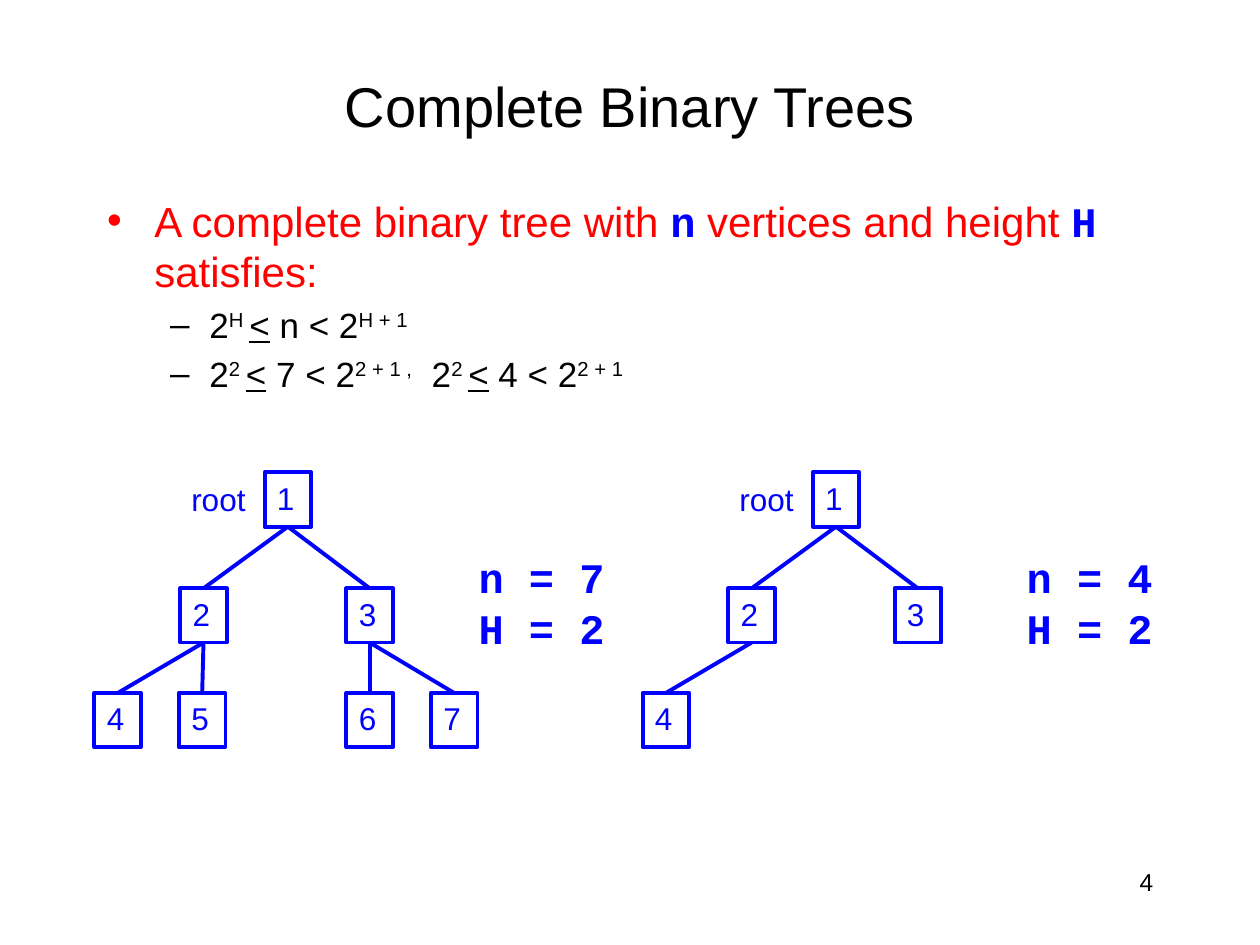
from lxml import etree
from pptx import Presentation
from pptx import util as u
from pptx.dml.color import RGBColor
from pptx.enum import shapes, text
from pptx.oxml.ns import qn

PX = 9144  # EMU per px, 100 px to the inch
HUES = {"ink": "000000", "red": "FF0000", "blue": "0000FF"}

# Text formats
LEAD = {"size": 24, "name": "Arial", "hue": "red", "bold": False}
CODE = {"size": 24, "name": "Courier New", "hue": "blue", "bold": True}
MATH = {"size": 20, "name": "Arial", "hue": "ink"}
SUP = MATH | {"base": 30}
LINE = MATH | {"underline": True}
NODE = {"size": 18, "name": "Arial", "hue": "blue"}
HEAD = {"size": 32, "name": "Arial", "hue": "ink"}
PAGE = {"size": 14, "name": "Arial", "hue": "ink"}

# Tree layout: node number -> left, top; the parent of n is n // 2
SPOTS = {1: (210, 375), 2: (143, 467), 3: (275, 467),
         4: (75, 550), 5: (142, 550), 6: (275, 550), 7: (342, 550)}
STEP = 435  # from one tree to the next


class Deck:
    def __init__(self):
        self.prs = Presentation()
        self.prs.slide_width, self.prs.slide_height = 1000 * PX, 750 * PX
        self.slide = self.prs.slides.add_slide(self.prs.slide_layouts[1])
        self.items = self.slide.shapes

    def style(self, para, runs):
        for words, look in runs:
            run = para.add_run()
            run.text = words
            for key, val in look.items():
                if key == "hue":
                    run.font.color.rgb = RGBColor.from_string(HUES[val])
                elif key == "base":
                    run._r.get_or_add_rPr().set("baseline", str(val * 1000))
                else:
                    setattr(run.font, key, u.Pt(val) if key == "size" else val)

    def fill(self, frame, paras, align=None, level=0):
        for i, runs in enumerate(paras):
            para = frame.add_paragraph() if i else frame.paragraphs[0]
            para.level = level if i else 0
            para.alignment = align
            self.style(para, runs)

    def holder(self, idx, at, paras, **form):
        item = self.slide.placeholders[idx]
        item.left, item.top, item.width, item.height = (v * PX for v in at)
        item.text_frame.auto_size = text.MSO_AUTO_SIZE.NONE
        self.fill(item.text_frame, paras, **form)
        return item.text_frame

    def label(self, at, paras, wrap=False, align=None):
        frame = self.items.add_textbox(*(v * PX for v in at)).text_frame
        frame.word_wrap = wrap
        if not wrap:
            frame.auto_size = text.MSO_AUTO_SIZE.SHAPE_TO_FIT_TEXT
        self.fill(frame, paras, align)

    def box(self, x, y, words):
        item = self.items.add_shape(shapes.MSO_SHAPE.RECTANGLE,
                                    x * PX, y * PX, 37 * PX, 43 * PX)
        item.shadow.inherit = False
        item.fill.background()
        self.stroke(item)
        frame = item.text_frame
        frame.word_wrap = False
        frame.auto_size = text.MSO_AUTO_SIZE.SHAPE_TO_FIT_TEXT
        frame.vertical_anchor = text.MSO_ANCHOR.TOP
        self.fill(frame, [[(words, NODE)]], text.PP_ALIGN.LEFT)
        return item

    def stroke(self, item):
        item.line.color.rgb = RGBColor.from_string(HUES["blue"])
        item.line.width = u.Pt(2.25)

    def edge(self, top, low):
        item = self.items.add_connector(shapes.MSO_CONNECTOR.STRAIGHT, 0, 0, 0, 0)
        item.begin_connect(top, 2)
        item.end_connect(low, 0)
        self.stroke(item)
        etree.SubElement(item._element.spPr, qn("a:effectLst"))

    def tree(self, count, shift):
        nodes = {n: self.box(x + shift, y, str(n))
                 for n, (x, y) in SPOTS.items() if n <= count}
        for n in range(2, count + 1):
            self.edge(nodes[n // 2], nodes[n])
        self.label((142 + shift, 376, 63, 40), [[("root", NODE)]])
        self.label((370 + shift, 433, 120, 90),
                   [[(f"n = {count}", CODE)], [("H = 2", CODE)]])


def main():
    deck = Deck()

    # Page number
    deck.label((717, 683, 208, 50), [[("4", PAGE)]], True, text.PP_ALIGN.RIGHT)

    # Title and list
    title = deck.holder(0, (75, 42, 850, 83), [[("Complete Binary Trees", HEAD)]],
                        align=text.PP_ALIGN.CENTER)
    title.vertical_anchor = text.MSO_ANCHOR.MIDDLE
    deck.holder(1, (75, 150, 850, 517), [
        [("A complete binary tree with ", LEAD), ("n", CODE),
         (" vertices and height ", LEAD), ("H", CODE), (" satisfies:", LEAD)],
        [("2", MATH), ("H ", SUP), ("<", LINE), (" n < 2", MATH), ("H + 1", SUP)],
        [("2", MATH), ("2 ", SUP), ("<", LINE), (" 7 < 2", MATH), ("2 + 1 ,", SUP),
         ("  2", MATH), ("2 ", SUP), ("<", LINE), (" 4 < 2", MATH), ("2 + 1", SUP)],
    ], level=1)

    # Two trees side by side
    for i, count in enumerate((7, 4)):
        deck.tree(count, i * STEP)

    deck.prs.save("out.pptx")


if __name__ == "__main__":
    main()
